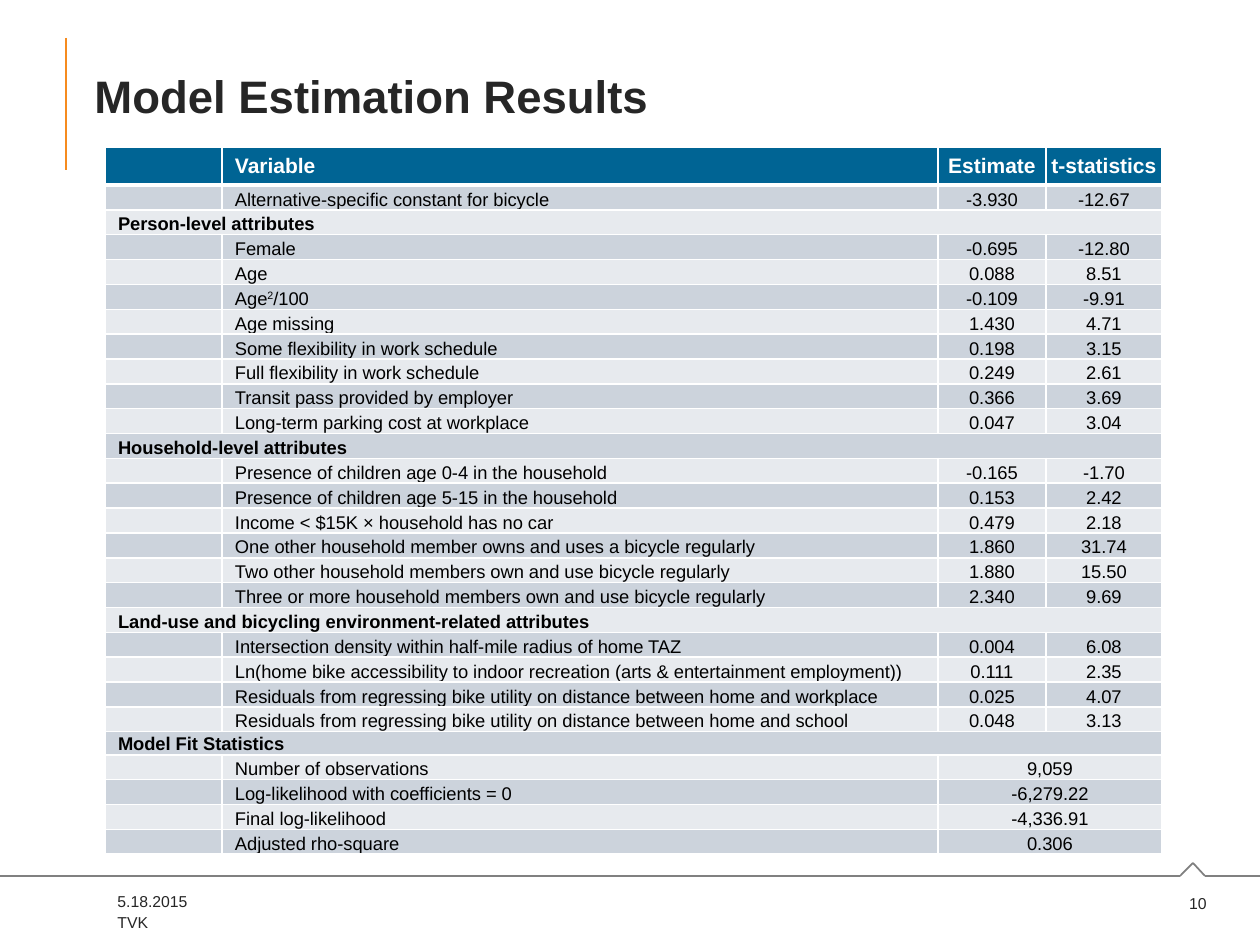
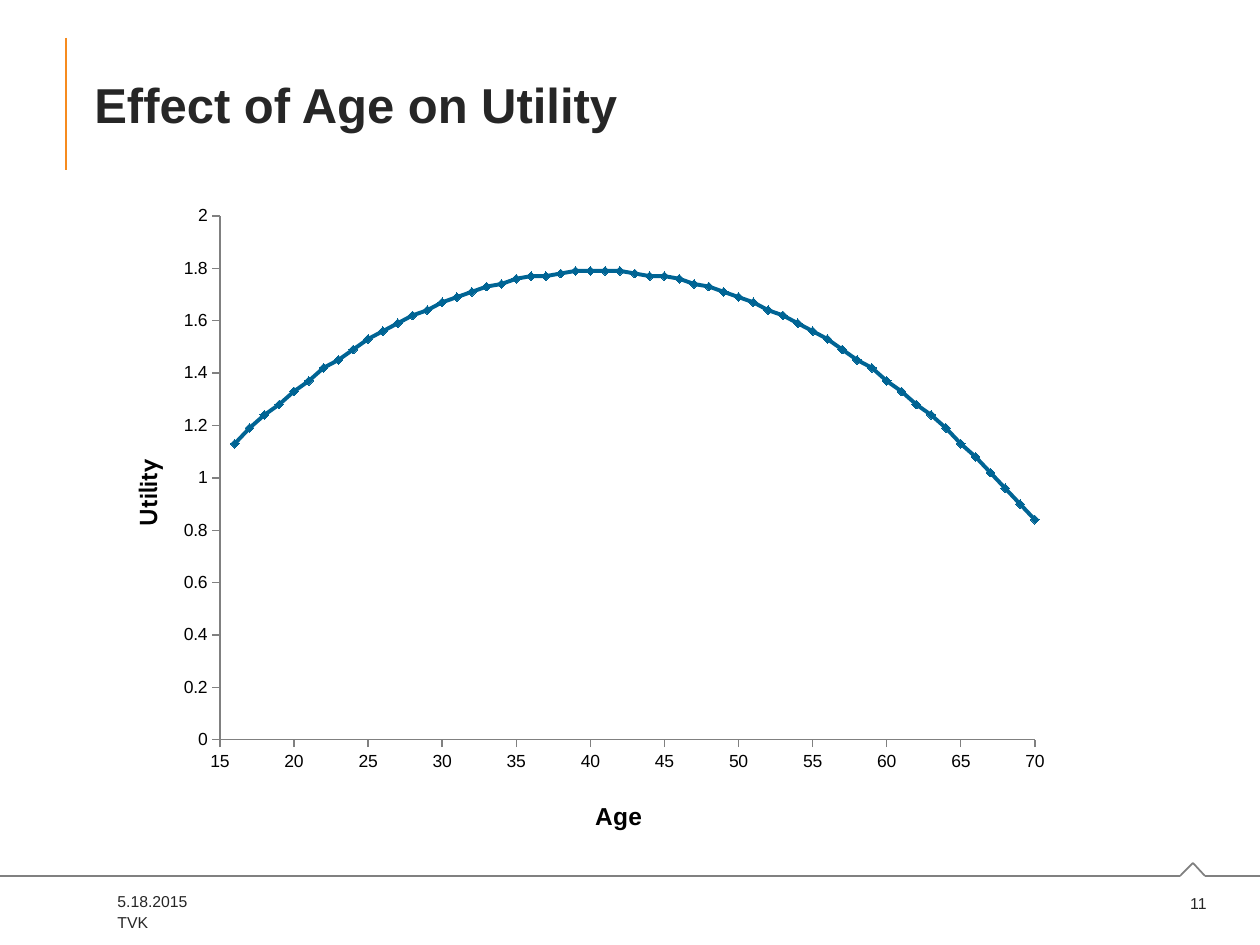
from itertools import pairwise

from lxml.etree import SubElement
from pptx import Presentation
from pptx.chart.data import XyChartData
from pptx.dml.color import RGBColor
from pptx.enum.chart import XL_CHART_TYPE as CT, XL_MARKER_STYLE as MARKER, XL_TICK_MARK as TICK
from pptx.enum.shapes import MSO_CONNECTOR as CONN
from pptx.enum.text import MSO_ANCHOR as ANCHOR, PP_ALIGN as ALIGN
from pptx.oxml import parse_xml
from pptx.oxml.ns import nsdecls, qn
from pptx.util import Pt

EMU_PER_PX = 914400 / 126
FONT = "Arial"
INK, BLACK, WHITE = "262626", "000000", "FFFFFF"
BLUE, ORANGE, GREY = "006494", "F68B1F", "808080"
BANDS = "CCD3DC", "E7EAEE"

HEADINGS = "", "Variable", "Estimate", "t-statistics"
ROWS = [
    ("Alternative-specific constant for bicycle", "-3.930", "-12.67"),
    ("Person-level attributes",),
    ("Female", "-0.695", "-12.80"),
    ("Age", "0.088", "8.51"),
    ("Age^2^/100", "-0.109", "-9.91"),
    ("Age missing", "1.430", "4.71"),
    ("Some flexibility in work schedule", "0.198", "3.15"),
    ("Full flexibility in work schedule", "0.249", "2.61"),
    ("Transit pass provided by employer", "0.366", "3.69"),
    ("Long-term parking cost at workplace", "0.047", "3.04"),
    ("Household-level attributes",),
    ("Presence of children age 0-4 in the household", "-0.165", "-1.70"),
    ("Presence of children age 5-15 in the household", "0.153", "2.42"),
    ("Income < $15K × household has no car", "0.479", "2.18"),
    ("One other household member owns and uses a bicycle regularly", "1.860", "31.74"),
    ("Two other household members own and use bicycle regularly", "1.880", "15.50"),
    ("Three or more household members own and use bicycle regularly", "2.340", "9.69"),
    ("Land-use and bicycling environment-related attributes",),
    ("Intersection density within half-mile radius of home TAZ", "0.004", "6.08"),
    ("Ln(home bike accessibility to indoor recreation (arts & entertainment employment))",
     "0.111", "2.35"),
    ("Residuals from regressing bike utility on distance between home and workplace",
     "0.025", "4.07"),
    ("Residuals from regressing bike utility on distance between home and school",
     "0.048", "3.13"),
    ("Model Fit Statistics",),
    ("Number of observations", "9,059"),
    ("Log-likelihood with coefficients = 0", "-6,279.22"),
    ("Final log-likelihood", "-4,336.91"),
    ("Adjusted rho-square", "0.306"),
]
FIRST_AGE = 16
UTILITIES = [
    1.13, 1.19, 1.24, 1.28, 1.33, 1.37, 1.42, 1.45, 1.49, 1.53, 1.56,
    1.59, 1.62, 1.64, 1.67, 1.69, 1.71, 1.73, 1.74, 1.76, 1.77, 1.77,
    1.78, 1.79, 1.79, 1.79, 1.79, 1.78, 1.77, 1.77, 1.76, 1.74, 1.73,
    1.71, 1.69, 1.67, 1.64, 1.62, 1.59, 1.56, 1.53, 1.49, 1.45, 1.42,
    1.37, 1.33, 1.28, 1.24, 1.19, 1.13, 1.08, 1.02, 0.96, 0.9, 0.84,
]


def px(n):
    """Turn pixels into EMU."""
    return round(n * EMU_PER_PX)


def rgb(code):
    """Turn a hex string into a colour."""
    return RGBColor.from_string(code)


def style(font, size, color=INK, bold=False, name=FONT):
    """Format a font."""
    font.size, font.bold, font.name = Pt(size), bold, name
    font.color.rgb = rgb(color)


def write(tf, text, size=9, color=INK, bold=False, align=ALIGN.LEFT, indent=0):
    """Write one paragraph, raising the parts set between ^ signs."""
    p = tf.paragraphs[0]
    p.alignment = align
    if indent:
        p._p.get_or_add_pPr().set("marL", str(px(indent)))
    if not text:
        p._p.get_or_add_endParaRPr().set("sz", str(round(size * 100)))
        return
    for i, part in enumerate(text.split("^")):
        r = p.add_run()
        r.text = part
        style(r.font, size, color, bold)
        if i % 2:
            r.font._element.set("baseline", "30000")


def add_text(s, box, text, anchor=ANCHOR.TOP, **fmt):
    """Add a wrapped text box."""
    tf = s.shapes.add_textbox(*map(px, box)).text_frame
    tf.word_wrap, tf.vertical_anchor = True, anchor
    write(tf, text, **fmt)


def add_line(s, start, end, color, width):
    """Add a straight line without a shadow."""
    line = s.shapes.add_connector(CONN.STRAIGHT, *map(px, (*start, *end)))
    line.line.color.rgb, line.line.width = rgb(color), Pt(width)
    SubElement(line._element.spPr, qn("a:effectLst"))


def add_footer(s, box, number):
    """Add the notched rule, date, firm and slide number."""
    x, y, w, _ = box
    rule = y + 13
    points = [(x, rule), (x + 1180, rule), (x + 1193, y), (x + 1205, rule), (x + w, rule)]
    for start, end in pairwise(points):
        add_line(s, start, end, GREY, 1)
    add_text(s, (x + 1166, y + 24, 53, 32), str(number), ANCHOR.MIDDLE, align=ALIGN.RIGHT)
    add_text(s, (x + 105, y + 23, 335, 32), "5.18.2015")
    add_text(s, (x + 105, y + 44, 286, 32), "TVK")


def add_frame(prs, title, title_box, size, number):
    """Add a slide with its accent line, title and footer."""
    s = prs.slides.add_slide(prs.slide_layouts[6])
    add_line(s, (66, 38), (66, 170), ORANGE, 1.5)
    add_footer(s, (0, 863, 1260, 82), number)
    add_text(s, title_box, title, ANCHOR.MIDDLE, size=size, bold=True)
    return s


def format_cell(cell, fill, anchor, top, bottom):
    """Set the fill, insets and white borders of a cell."""
    cell.fill.solid()
    cell.fill.fore_color.rgb = rgb(fill)
    cell.vertical_anchor = anchor
    cell.margin_left = cell.margin_right = cell.margin_top = px(1)
    cell.margin_bottom = 0
    tc_pr = cell._tc.get_or_add_tcPr()
    for i, (side, width) in enumerate(zip("LRTB", (1, 1, top, bottom))):
        tc_pr.insert(i, parse_xml(
            f'<a:ln{side} {nsdecls("a")} w="{Pt(width)}"><a:solidFill>'
            f'<a:srgbClr val="{WHITE}"/></a:solidFill></a:ln{side}>'))


def add_results(s, box):
    """Add the table of estimates with its section rows."""
    header, last_section = 38, 23
    row_height = (box[3] - header - last_section) / (len(ROWS) - 1)
    table = s.shapes.add_table(len(ROWS) + 1, len(HEADINGS), *map(px, box)).table
    for col, width in zip(table.columns, (117, 716, 108, 116)):
        col.width = px(width)
    for i, values in enumerate([HEADINGS, *ROWS]):
        is_head, is_section = i == 0, len(values) == 1
        fill = BLUE if is_head else BANDS[(i - 1) % 2]
        texts = values if is_head or is_section else ("", *values)
        texts += ("",) * (len(HEADINGS) - len(texts))
        height = header if is_head else row_height
        if values[0] == "Model Fit Statistics":
            height = last_section
        table.rows[i].height = px(height)
        for j, text in enumerate(texts):
            cell = table.cell(i, j)
            format_cell(cell, fill, ANCHOR.MIDDLE if is_head else ANCHOR.BOTTOM,
                        top=3 if i == 1 else 1, bottom=3 if is_head else 1)
            write(cell.text_frame, text, size=12 if is_head else 10.5,
                  color=WHITE if is_head else BLACK, bold=is_head or is_section,
                  align=ALIGN.CENTER if j > 1 else ALIGN.LEFT, indent=0 if j > 1 else 12)
        if is_section:
            table.cell(i, 0).merge(table.cell(i, 3))
        elif len(values) == 2:
            table.cell(i, 2).merge(table.cell(i, 3))


def layout_xml(x, y, w=None, h=None):
    """Make a manual chart layout from fractions of the chart."""
    parts = '<c:layoutTarget val="inner"/>' if w else ""
    parts += '<c:xMode val="edge"/><c:yMode val="edge"/>'
    for tag, value in zip("xywh", (x, y, w, h)):
        parts += f'<c:{tag} val="{value}"/>' if value else ""
    return parse_xml(f'<c:layout {nsdecls("c")}><c:manualLayout>{parts}</c:manualLayout></c:layout>')


def set_layout(parent, layout, index):
    """Replace the layout of a chart part."""
    for old in parent.findall(qn("c:layout")):
        parent.remove(old)
    parent.insert(index, layout)


def format_axis(axis, title, font, limits, place):
    """Set the scale, line and title of an axis."""
    axis.minimum_scale, axis.maximum_scale, axis.major_unit = limits
    axis.has_major_gridlines = False
    axis.major_tick_mark, axis.minor_tick_mark = TICK.OUTSIDE, TICK.NONE
    axis.format.line.color.rgb, axis.format.line.width = rgb(GREY), Pt(0.75)
    axis.tick_labels.number_format = "General"
    axis.tick_labels.number_format_is_linked = False
    r = axis.axis_title.text_frame.paragraphs[0].add_run()
    r.text = title
    style(r.font, 14, BLACK, True, font)
    set_layout(axis.axis_title._element, layout_xml(*place), 1)


def add_age_curve(s, box):
    """Add the scatter chart of utility by age."""
    data = XyChartData()
    points = data.add_series("Series 1")
    for age, utility in enumerate(UTILITIES, FIRST_AGE):
        points.add_data_point(age, utility)
    chart = s.shapes.add_chart(CT.XY_SCATTER_SMOOTH, *map(px, box), data).chart
    chart.has_legend = chart.has_title = False
    style(chart.font, 10, BLACK)
    format_axis(chart.category_axis, "Age", FONT, (15, 70, 5), (0.51, 0.92))
    format_axis(chart.value_axis, "Utility", "Cabin", (0, 2, 0.2), (0.03, 0.4))
    plot = chart.plots[0]
    plot.vary_by_categories = False
    set_layout(chart._chartSpace.chart.plotArea, layout_xml(0.127, 0.035, 0.842, 0.8), 0)
    curve = plot.series[0]
    curve.smooth = True
    curve.format.line.color.rgb, curve.format.line.width = rgb(BLUE), Pt(2.25)
    curve.marker.style, curve.marker.size = MARKER.DIAMOND, 5
    curve.marker.format.fill.solid()
    curve.marker.format.fill.fore_color.rgb = rgb(BLUE)
    curve.marker.format.line.color.rgb = rgb(BLUE)


def main():
    """Build the two slides."""
    prs = Presentation()
    prs.slide_width, prs.slide_height = px(1260), px(945)
    s = add_frame(prs, "Model Estimation Results", (82, 40, 1115, 110), 26, 10)
    add_results(s, (105, 147, 1057, 708))
    s = add_frame(prs, "Effect of Age on Utility", (82, 38, 1115, 132), 28, 11)
    add_age_curve(s, (97, 193, 968, 655))
    prs.save("out.pptx")


if __name__ == "__main__":
    main()
